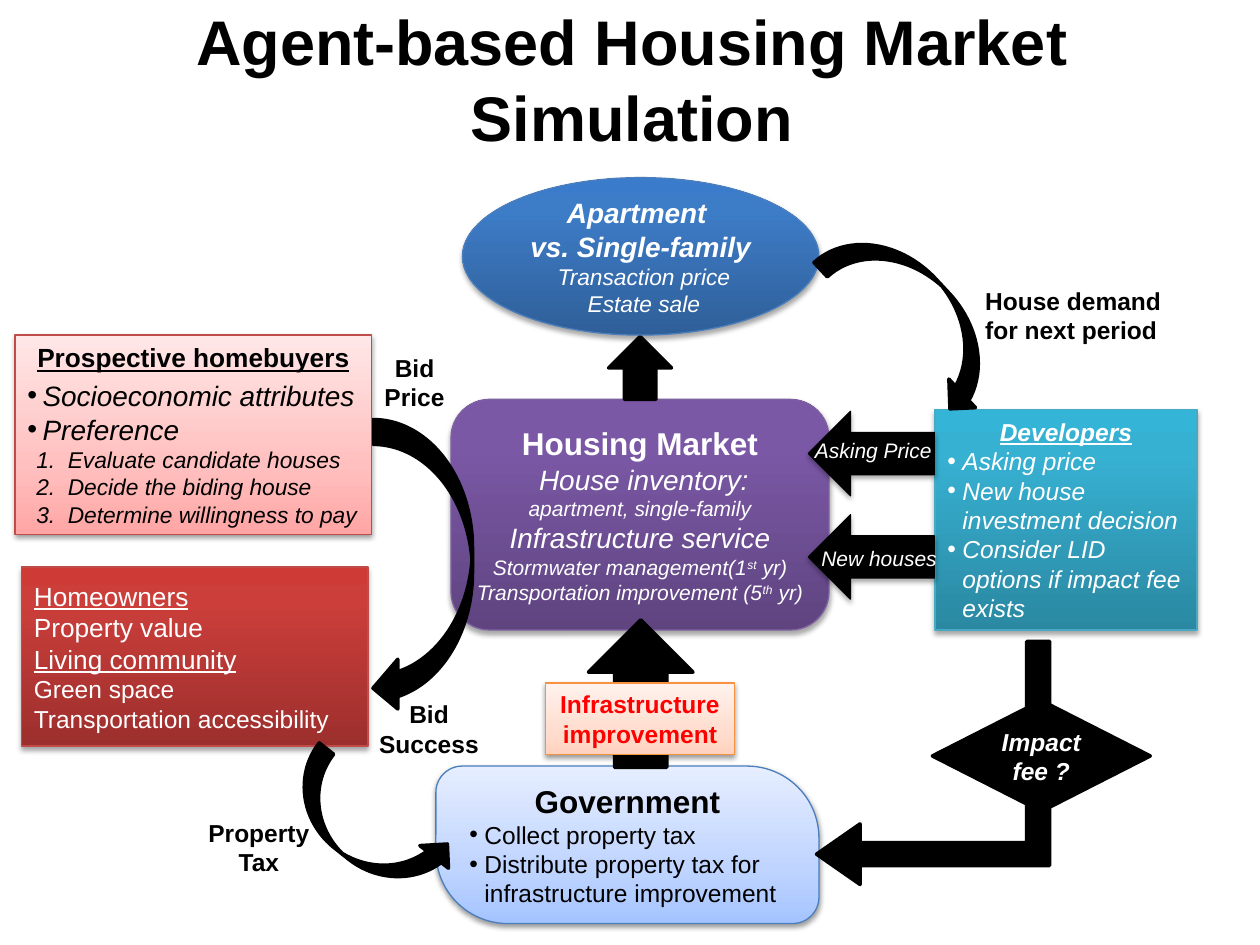
from copy import deepcopy

from lxml import etree
from pptx import Presentation
from pptx.dml.color import RGBColor
from pptx.enum import shapes, text
from pptx.oxml.ns import qn
from pptx.util import Inches, Pt

KINDS = shapes.MSO_SHAPE
CENTER, LEFT = text.PP_ALIGN.CENTER, text.PP_ALIGN.LEFT
BLACK, WHITE = "000000", "FFFFFF"
DARK_SHADOW = (35, 1.8)
LIGHT_SHADOW = (38, 1.6)
HEADING = dict(bold=True, size=18)
LABEL = dict(bold=True, size=14)


def rgb(value):
    return RGBColor.from_string(value)


def line(content, align=CENTER, bullet=None, after=None, **style):
    """Describe one paragraph; content is a string or a list of (text, raised)."""
    runs = [(content, False)] if isinstance(content, str) else content
    return dict(runs=runs, align=align, bullet=bullet, after=after, style=style)


def bullets(items, **style):
    return [line(item, LEFT, "•", **style) for item in items]


def set_bullet(paragraph, bullet):
    numbered = bullet == "1."
    margin, indent = (0.32, -0.25) if numbered else (0.12, -0.12)
    properties = paragraph._p.get_or_add_pPr()
    properties.set("marL", str(Inches(margin)))
    properties.set("indent", str(Inches(indent)))
    if numbered:
        etree.SubElement(properties, qn("a:buAutoNum"), type="arabicPeriod")
    else:
        etree.SubElement(properties, qn("a:buFont"), typeface="Arial")
        etree.SubElement(properties, qn("a:buChar"), char=bullet)


def write(frame, lines, color):
    for index, entry in enumerate(lines):
        paragraph = frame.paragraphs[0] if index == 0 else frame.add_paragraph()
        paragraph.alignment = entry["align"]
        if entry["after"]:
            paragraph.space_after = Pt(entry["after"])
        if entry["bullet"]:
            set_bullet(paragraph, entry["bullet"])
        for words, raised in entry["runs"]:
            run = paragraph.add_run()
            run.text = words
            style = dict(entry["style"], name="Arial")
            style["size"] = Pt(style["size"])
            for name, value in style.items():
                setattr(run.font, name, value)
            run.font.color.rgb = rgb(color)
            if raised:
                run._r.get_or_add_rPr().set("baseline", "30000")


def fill_gradient(shape, stops):
    """Fill from bottom to top with (position, colour) stops."""
    shape.fill.gradient()
    shape.fill.gradient_angle = 90
    first = shape.fill._xPr.find(".//" + qn("a:gs"))
    first.addnext(deepcopy(first))
    for stop, (position, color) in zip(shape.fill.gradient_stops, stops):
        stop.color.rgb = rgb(color)
        stop.position = position / 100


def add_shadow(shape, opacity, distance):
    effects = shape.element.spPr.find(qn("a:effectLst"))
    shadow = etree.SubElement(
        effects, qn("a:outerShdw"), blurRad=str(Pt(3.1)), dist=str(Pt(distance)),
        dir="5400000", rotWithShape="0")
    color = etree.SubElement(shadow, qn("a:srgbClr"), val=BLACK)
    etree.SubElement(color, qn("a:alpha"), val=str(opacity * 1000))


def add_shape(slide, kind, box, outline, width, shadow=None, adjust=()):
    shape = slide.shapes.add_shape(kind, *map(Inches, box))
    shape.shadow.inherit = False
    shape.line.color.rgb = rgb(outline)
    shape.line.width = Pt(width)
    for index, value in enumerate(adjust):
        shape.adjustments[index] = value
    if shadow:
        add_shadow(shape, *shadow)
    return shape


def add_panel(slide, kind, box, stops, outline, lines, color=WHITE,
              shadow=DARK_SHADOW, adjust=()):
    shape = add_shape(slide, kind, box, outline, 0.75, shadow, adjust)
    fill_gradient(shape, stops)
    shape.text_frame.vertical_anchor = text.MSO_ANCHOR.MIDDLE
    write(shape.text_frame, lines, color)


def add_black(slide, kind, box, rotation=0, width=2, shadow=None, adjust=()):
    shape = add_shape(slide, kind, box, BLACK, width, shadow, adjust)
    shape.fill.solid()
    shape.fill.fore_color.rgb = rgb(BLACK)
    shape.rotation = rotation
    return shape


def add_label(slide, box, entry, color=BLACK, wrap=True):
    frame = slide.shapes.add_textbox(*map(Inches, box)).text_frame
    frame.word_wrap = wrap
    frame.auto_size = text.MSO_AUTO_SIZE.SHAPE_TO_FIT_TEXT
    write(frame, [entry], color)
    return frame


def add_market(slide):
    large = dict(size=16, italic=True)
    small = dict(size=12, italic=True)
    add_panel(
        slide, KINDS.ROUNDED_RECTANGLE, (3.58, 3.17, 3, 1.83),
        [(0, "5F4480"), (80, "7B58A6"), (100, "7C57A8")], "7D60A0",
        [line("Housing Market", **HEADING),
         line(" House inventory:", **large),
         line("apartment, single-family", **small),
         line(" Infrastructure service ", **large),
         line([("Stormwater management(1", False), ("st", True), (" yr)", False)], **small),
         line([("Transportation improvement (5", False), ("th", True), (" yr)", False)],
              **small)])


def add_households(slide):
    steps = ["Evaluate candidate houses", "Decide the biding house",
             "Determine willingness to pay"]
    add_panel(
        slide, KINDS.RECTANGLE, (0.12, 2.66, 2.83, 1.58),
        [(0, "FFA6A5"), (35, "FFC0BF"), (100, "FFE7E7")], "BF4C48",
        [line("Prospective homebuyers", after=3, size=15, bold=True, underline=True),
         *bullets(["Socioeconomic attributes", "Preference"], size=16, italic=True),
         *[line(step, LEFT, "1.", size=13, italic=True) for step in steps]],
        BLACK, LIGHT_SHADOW)
    add_panel(
        slide, KINDS.RECTANGLE, (0.17, 4.5, 2.75, 1.42),
        [(0, "9C2F2D"), (80, "CB3E3A"), (100, "CE3B37")], "BF4C48",
        [line("Homeowners", LEFT, size=15, underline=True),
         line("Property value", LEFT, size=15),
         line("Living community", LEFT, size=15, underline=True),
         line("Green space", LEFT, size=14),
         line("Transportation accessibility", LEFT, size=14)])


def add_developers(slide):
    items = ["Asking price", "New house investment decision",
             "Consider LID options if impact fee exists"]
    add_panel(
        slide, KINDS.RECTANGLE, (7.42, 3.25, 2.08, 1.75),
        [(0, "2A88A2"), (80, "37B1D2"), (100, "34B4D6")], "46AAC5",
        [line("Developers", italic=True, underline=True, **LABEL),
         *bullets(items, size=14, italic=True)])
    for top in (3.1, 3.92):
        add_black(slide, KINDS.DOWN_ARROW, (6.58, top, 0.67, 1), 90, 0.75, DARK_SHADOW)


def add_sales(slide):
    add_panel(
        slide, KINDS.OVAL, (3.67, 1.41, 2.83, 1.25),
        [(0, "2F5F99"), (80, "3D7CC7"), (100, "3A7CCB")], "4B7EBC",
        [line(words, size=16, bold=True, italic=True)
         for words in ("Apartment ", "vs. Single-family")]
        + [line(words, size=13, italic=True)
           for words in (" Transaction price", " Estate sale")])


def add_government(slide):
    items = ["Collect property tax",
             "Distribute property tax for infrastructure improvement"]
    add_panel(
        slide, KINDS.ROUND_2_DIAG_RECTANGLE, (3.46, 6.08, 3.04, 1.25),
        [(0, "A4C4FF"), (35, "BFD4FF"), (100, "E6EEFF")], "4B7EBC",
        [line("Government", **HEADING), *bullets(items, size=14)],
        BLACK, LIGHT_SHADOW, (0.167, 0.457))


def add_impact_fee(slide):
    arrow = add_black(slide, KINDS.BENT_UP_ARROW, (6.44, 5.13, 1.93, 1.85), 270,
                      adjust=(0.098, 0.13, 0.187))
    arrow.element.spPr.find(qn("a:xfrm")).set("flipH", "1")
    diamond = add_black(slide, KINDS.DIAMOND, (7.4, 5.56, 1.73, 0.88))
    write(diamond.text_frame, [line("Impact fee ?", italic=True, **LABEL)], WHITE)


def main():
    presentation = Presentation()
    presentation.slide_width, presentation.slide_height = Inches(10), Inches(7.5)
    slide = presentation.slides.add_slide(presentation.slide_layouts[6])

    add_market(slide)
    add_black(slide, KINDS.CURVED_LEFT_ARROW, (2.96, 3.33, 0.79, 2.33))
    add_black(slide, KINDS.DOWN_ARROW, (4.83, 2.67, 0.5, 0.5), 180)
    add_households(slide)
    add_developers(slide)
    add_sales(slide)
    add_government(slide)
    add_label(slide, (2.83, 2.75, 0.92, 0.57), line("Bid Price", **LABEL))
    add_label(slide, (2.89, 5.5, 1.03, 0.57), line("Bid Success", **LABEL))
    add_black(slide, KINDS.DOWN_ARROW, (4.67, 4.92, 0.83, 1.17), 180)
    for words, box in (("Asking Price", (6.37, 3.42, 1.13, 0.3)),
                       ("New houses", (6.42, 4.28, 1.12, 0.3))):
        add_label(slide, box, line(words, LEFT, size=12, italic=True), WHITE, wrap=False)
    add_impact_fee(slide)
    add_label(slide, (7.72, 2.22, 1.69, 0.57),
              line("House demand for next period", LEFT, **LABEL))
    add_panel(slide, KINDS.RECTANGLE, (4.33, 5.42, 1.5, 0.57),
              [(0, "FFD2BD"), (35, "FFDED0"), (100, "FFF2ED")], "F69240",
              [line(words, **LABEL) for words in ("Infrastructure ", "improvement")],
              "FF0000", LIGHT_SHADOW)
    title = add_label(slide, (0.17, 0.08, 9.69, 1.08),
                      line("Agent-based Housing Market Simulation", size=36, bold=True))
    title.auto_size = text.MSO_AUTO_SIZE.NONE
    title.vertical_anchor = text.MSO_ANCHOR.MIDDLE
    add_black(slide, KINDS.CURVED_RIGHT_ARROW, (2.63, 5.85, 0.58, 1.44), 308.3)
    add_label(slide, (1.54, 6.44, 1.03, 0.57), line("Property Tax", **LABEL))
    add_black(slide, KINDS.CURVED_LEFT_ARROW, (6.97, 1.64, 0.62, 1.74), 317.1)
    presentation.save("out.pptx")


if __name__ == "__main__":
    main()
